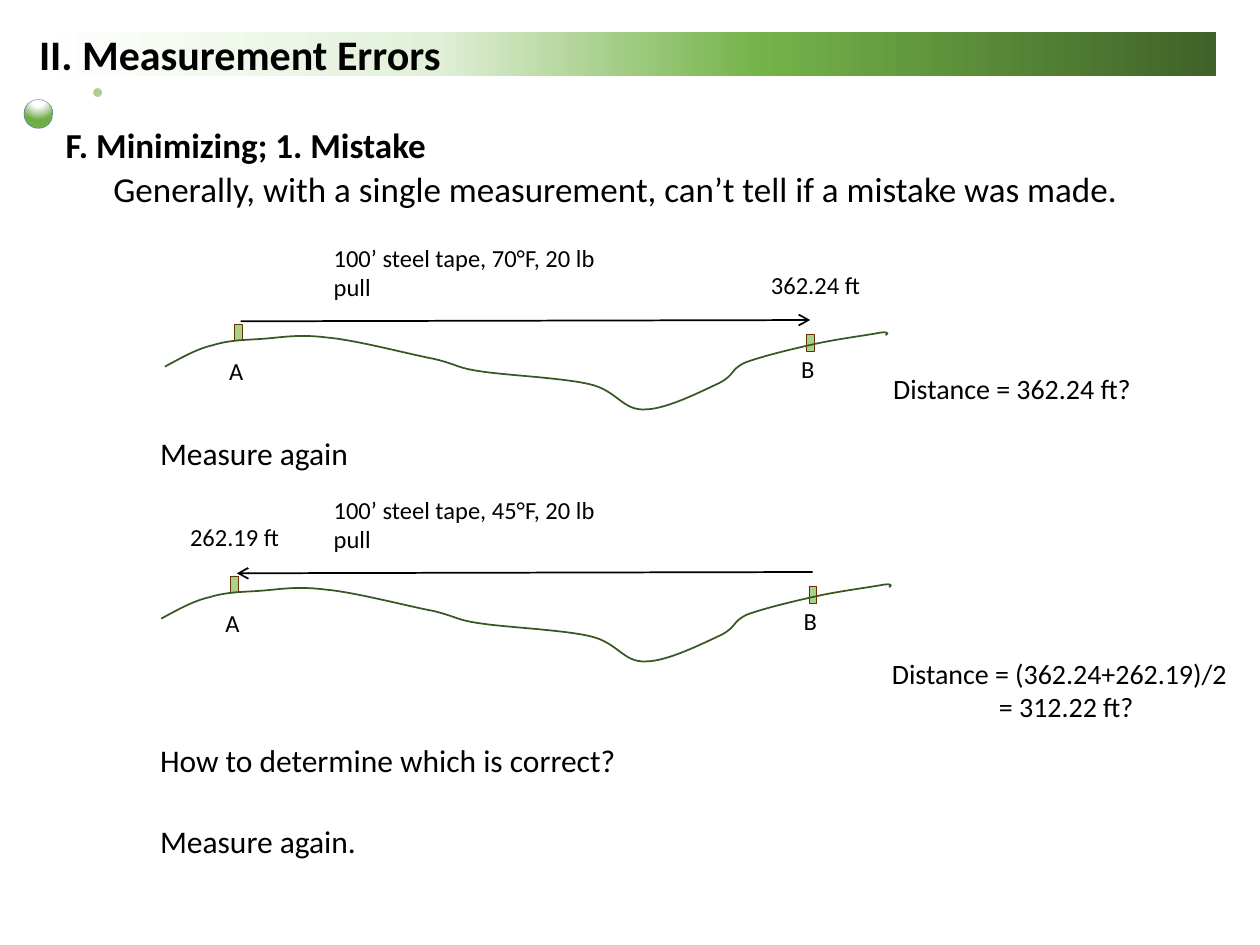
from dataclasses import dataclass

from lxml.etree import SubElement
from pptx import Presentation
from pptx.dml.color import RGBColor
from pptx.enum.shapes import MSO_CONNECTOR, MSO_SHAPE
from pptx.enum.text import MSO_ANCHOR, MSO_AUTO_SIZE, PP_ALIGN
from pptx.oxml import parse_xml
from pptx.oxml.ns import nsdecls, qn
from pptx.util import Inches, Pt

FONT = "Calibri"
BLACK, LIGHT_GREEN, GROUND_GREEN, BROWN = "000000", "A9D18E", "385723", "663300"

# Start of the ground line, then control, control and end point of each curve
GROUND_START = (1.31, 2.91)
GROUND_CURVES = [
    ((1.44, 2.84), (1.56, 2.77), (1.69, 2.74)),
    ((1.82, 2.7), (1.93, 2.7), (2.08, 2.69)),
    ((2.23, 2.68), (2.37, 2.65), (2.6, 2.68)),
    ((2.83, 2.7), (3.24, 2.81), (3.45, 2.85)),
    ((3.65, 2.9), (3.62, 2.92), (3.83, 2.95)),
    ((4.03, 2.98), (4.47, 3), (4.68, 3.05)),
    ((4.9, 3.1), (4.94, 3.26), (5.12, 3.25)),
    ((5.29, 3.25), (5.58, 3.1), (5.71, 3.04)),
    ((5.84, 2.97), (5.79, 2.94), (5.91, 2.88)),
    ((6.04, 2.83), (6.29, 2.77), (6.47, 2.73)),
    ((6.65, 2.69), (6.89, 2.66), (6.99, 2.64)),
    ((7.08, 2.63), (7.03, 2.66), (7.03, 2.66)),
]


@dataclass
class Survey:
    tape: str
    reading: str
    reading_x: float
    a_x: float
    b_x: float
    down: float
    ground_x: float
    stretch: float
    backward: bool


@dataclass
class Line:
    text: str
    size: float
    indent: float = 0
    before: float = 0
    bold: bool = False


SURVEYS = [
    Survey("100’ steel tape, 70°F, 20 lb pull", "362.24 ft", 6.02,
           1.86, 6.4, 0, 1.31, 1, False),
    Survey("100’ steel tape, 45°F, 20 lb pull", "262.19 ft", 1.41,
           1.83, 6.42, 2, 1.28, 1.01, True),
]
BODY = [
    Line("F. Minimizing; 1. Mistake", 20, bold=True),
    Line("Generally, with a single measurement, can’t tell if a mistake was made.",
         20, 0.38, 3.3),
    Line("Measure again", 18, 0.75, 130.3),
    Line("How to determine which is correct?", 18, 0.75, 156.1),
    Line("Measure again.", 18, 0.75, 26.9),
]


def color(value: str) -> RGBColor:
    return RGBColor.from_string(value)


def write(paragraph, text: str, size: float = 14, bold: bool = False,
          indent: float = 0, before: float = 0, spacing: float = 1) -> None:
    run = paragraph.add_run()
    run.text = text
    run.font.name, run.font.size, run.font.bold = FONT, Pt(size), bold
    run.font.color.rgb = color(BLACK)
    paragraph.alignment = PP_ALIGN.LEFT
    paragraph.space_before, paragraph.line_spacing = Pt(before), spacing
    properties = paragraph._p.get_or_add_pPr()
    properties.set("marL", str(Inches(indent)))
    properties.set("indent", "0")
    SubElement(properties, qn("a:buNone"))


def place(shape, left: float, top: float, width: float, height: float) -> None:
    shape.left, shape.top = Inches(left), Inches(top)
    shape.width, shape.height = Inches(width), Inches(height)


def add_label(shapes, text: str, left: float, top: float, width: float,
              height: float = 0.34, wrap: bool = False, **style):
    label = shapes.add_textbox(Inches(left), Inches(top), Inches(width), Inches(height))
    label.text_frame.word_wrap = wrap
    write(label.text_frame.paragraphs[0], text, **style)
    return label


def add_solid(shapes, kind: MSO_SHAPE, left: float, top: float, width: float,
              height: float, fill: str = LIGHT_GREEN):
    solid = shapes.add_shape(kind, Inches(left), Inches(top), Inches(width), Inches(height))
    solid.shadow.inherit = False
    solid.fill.solid()
    solid.fill.fore_color.rgb = color(fill)
    solid.line.fill.background()
    return solid


def set_gradient(shape, stops: list[tuple[int, str]], direction: str) -> None:
    stop_xml = "".join(f'<a:gs pos="{at * 1000}"><a:srgbClr val="{value}"/></a:gs>'
                       for at, value in stops)
    gradient = parse_xml(f'<a:gradFill {nsdecls("a")} rotWithShape="1">'
                         f"<a:gsLst>{stop_xml}</a:gsLst>{direction}</a:gradFill>")
    properties = shape.element.spPr
    properties.replace(properties.find(qn("a:solidFill")), gradient)


def set_line(shape, value: str, width: float) -> None:
    shape.line.color.rgb = color(value)
    shape.line.width = Pt(width)


def add_arrow(shapes, start: tuple[float, float], end: tuple[float, float]) -> None:
    arrow = shapes.add_connector(MSO_CONNECTOR.STRAIGHT, *map(Inches, start + end))
    set_line(arrow, BLACK, 1)
    SubElement(arrow.line._get_or_add_ln(), qn("a:tailEnd"), type="arrow")
    SubElement(arrow.element.spPr, qn("a:effectLst"))


def bend(freeform) -> None:
    """Turn every three straight segments into one Bezier curve."""
    outline = freeform.element.find(".//" + qn("a:path"))
    segments = outline.findall(qn("a:lnTo"))
    for first in range(0, len(segments), 3):
        curve = SubElement(outline, qn("a:cubicBezTo"))
        for segment in segments[first:first + 3]:
            curve.append(segment[0])
            outline.remove(segment)


def add_ground(shapes, survey: Survey) -> None:
    corners = [GROUND_START] + [corner for curve in GROUND_CURVES for corner in curve]
    points = [(Inches(survey.ground_x + (x - GROUND_START[0]) * survey.stretch),
               Inches(y + survey.down)) for x, y in corners]
    builder = shapes.build_freeform(*points[0])
    builder.add_line_segments(points[1:], close=False)
    ground = builder.convert_to_shape()
    bend(ground)
    ground.shadow.inherit = False
    ground.fill.background()
    set_line(ground, GROUND_GREEN, 1)


def add_survey(slide_shapes, survey: Survey) -> None:
    shapes = slide_shapes.add_group_shape().shapes
    down = survey.down
    ends = [(survey.a_x + 0.05, 2.55 + down), (survey.b_x + 0.03, 2.54 + down)]
    add_arrow(shapes, *(reversed(ends) if survey.backward else ends))
    for name, left, top, height, label_top in (("A", survey.a_x, 2.57, 0.13, 2.78),
                                               ("B", survey.b_x, 2.65, 0.14, 2.76)):
        stake = add_solid(shapes, MSO_SHAPE.RECTANGLE, left, top + down, 0.06, height)
        set_line(stake, BROWN, 0.25)
        add_label(shapes, name, left - 0.14, label_top + down, 0.31)
    add_label(shapes, survey.reading, survey.reading_x, 2.09 + down, 0.92)
    add_label(shapes, survey.tape, 2.55, 1.88 + down, 2.5, wrap=True)
    add_ground(shapes, survey)


def add_decoration(shapes, title) -> None:
    bar = add_solid(shapes, MSO_SHAPE.RECTANGLE, 0.1, 0.25, 9.55, 0.35)
    set_gradient(bar, [(0, "3F6228"), (38, "74B349"), (65, "E2F0D9"), (98, "FFFFFF")],
                 '<a:lin ang="10800000" scaled="0"/>')
    ball = add_solid(shapes, MSO_SHAPE.OVAL, 0.19, 0.79, 0.23, 0.23)
    set_gradient(ball, [(0, "FFFFFF"), (35, "FFFFFF"), (100, "70AD47")],
                 '<a:path path="circle"><a:fillToRect l="50000" t="-80000" '
                 'r="50000" b="180000"/></a:path>')
    set_line(ball, "3B6BC1", 0.16)
    dot = add_solid(shapes, MSO_SHAPE.OVAL, 0.74, 0.7, 0.07, 0.07)
    for part in (bar, ball, dot):
        title.element.addprevious(part.element)


def main() -> None:
    deck = Presentation()
    deck.slide_width, deck.slide_height = Inches(10), Inches(7.5)
    slide = deck.slides.add_slide(deck.slide_layouts[1])
    shapes, title, body = slide.shapes, slide.shapes.title, slide.placeholders[1]

    add_decoration(shapes, title)
    place(title, 0.21, 0.18, 7.29, 0.5)
    title.text_frame.vertical_anchor = MSO_ANCHOR.MIDDLE
    write(title.text_frame.paragraphs[0], "II. Measurement Errors", size=24, bold=True)

    place(body, 0.42, 0.97, 8.62, 6.45)
    for holder in (title, body):
        holder.text_frame.auto_size = MSO_AUTO_SIZE.NONE
    for number, line in enumerate(BODY):
        frame = body.text_frame
        paragraph = frame.add_paragraph() if number else frame.paragraphs[0]
        write(paragraph, line.text, size=line.size, bold=line.bold,
              indent=line.indent, before=line.before, spacing=0.9)

    for survey in SURVEYS:
        add_survey(shapes, survey)
    add_label(shapes, "Distance = 362.24 ft?", 6.99, 2.9, 2.17, 0.37, size=16)
    average = add_label(shapes, "Distance = (362.24+262.19)/2", 6.98, 5.16, 2.89, 0.64, size=16)
    write(average.text_frame.add_paragraph(), "= 312.22 ft?", size=16, indent=0.85)
    deck.save("out.pptx")


if __name__ == "__main__":
    main()
